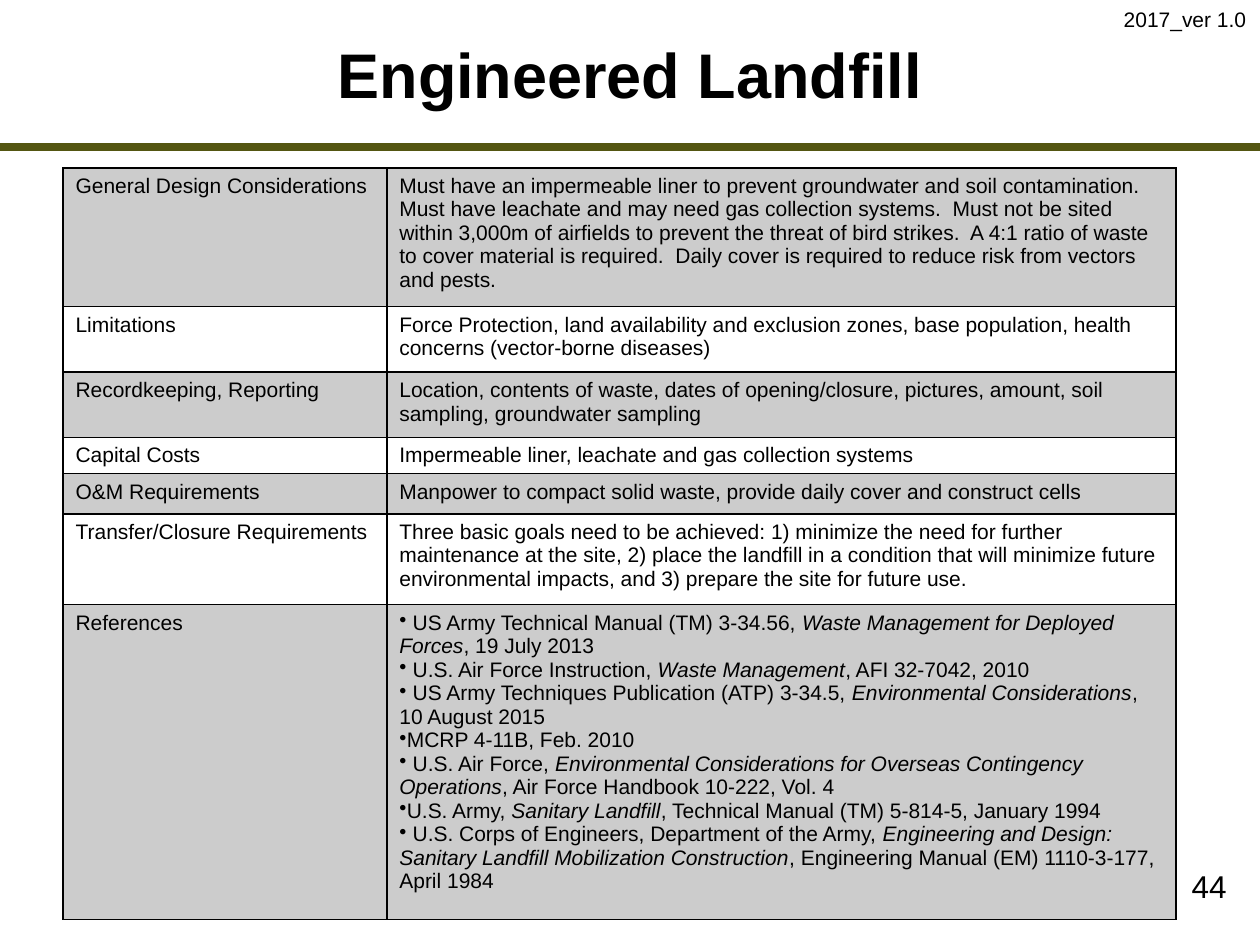
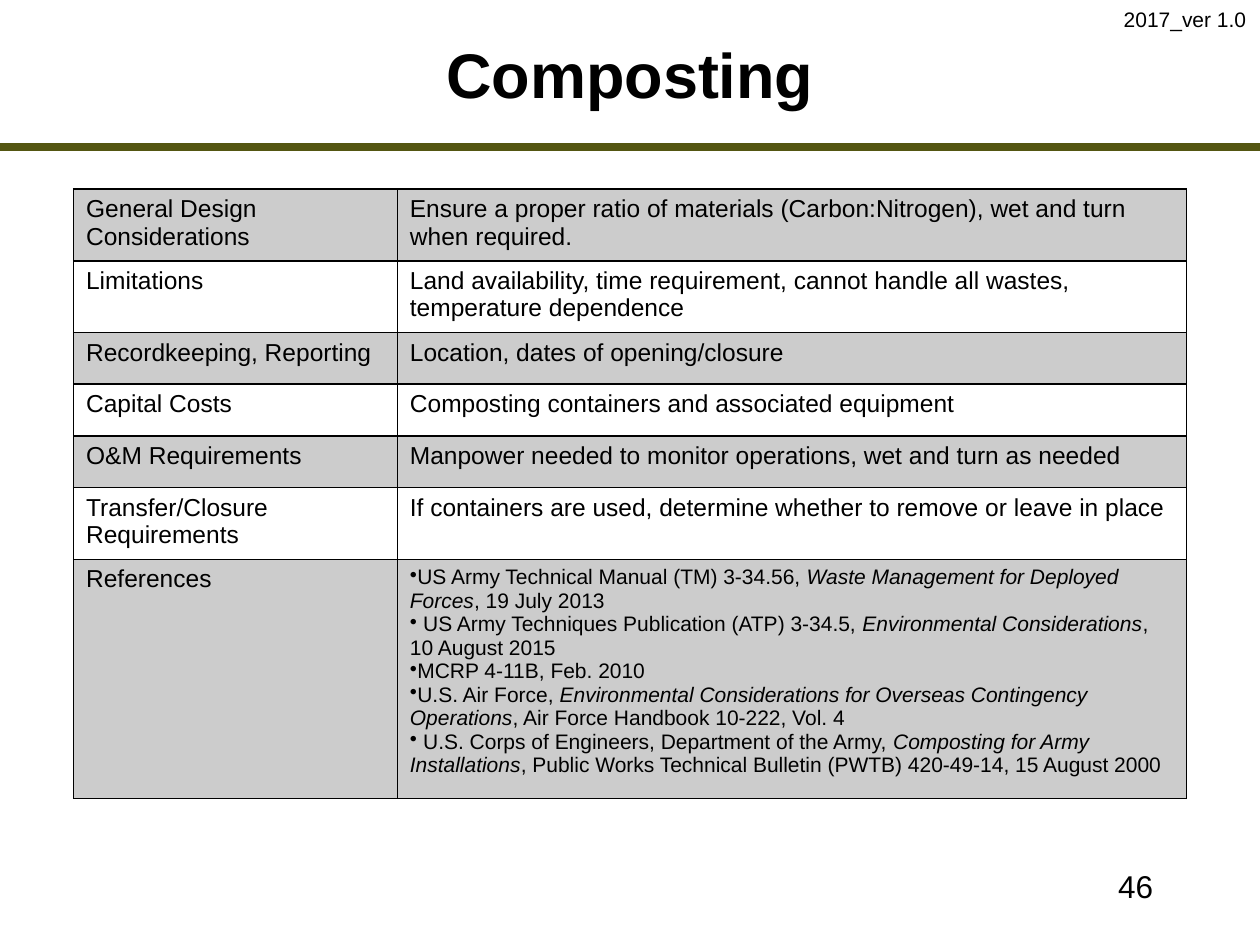
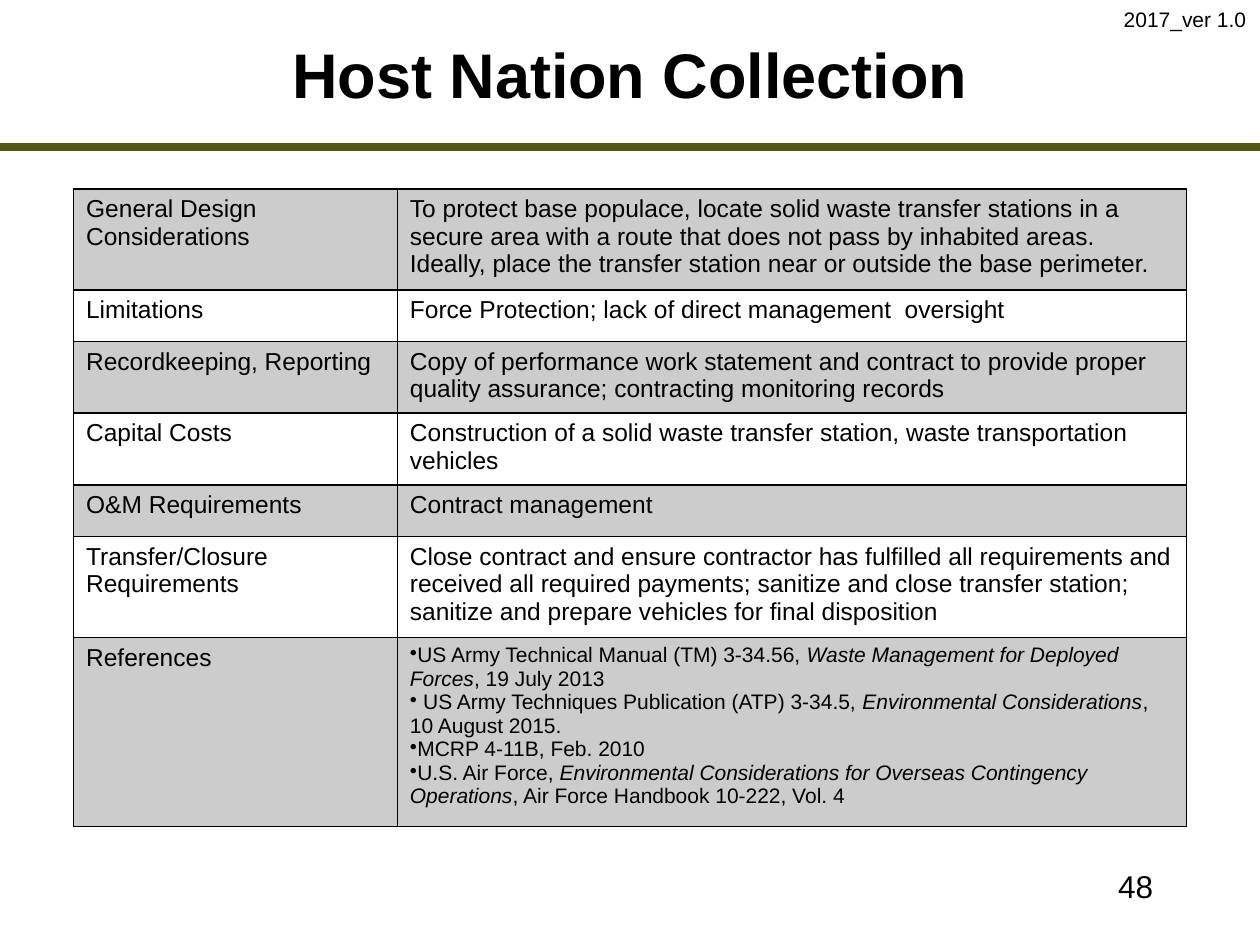
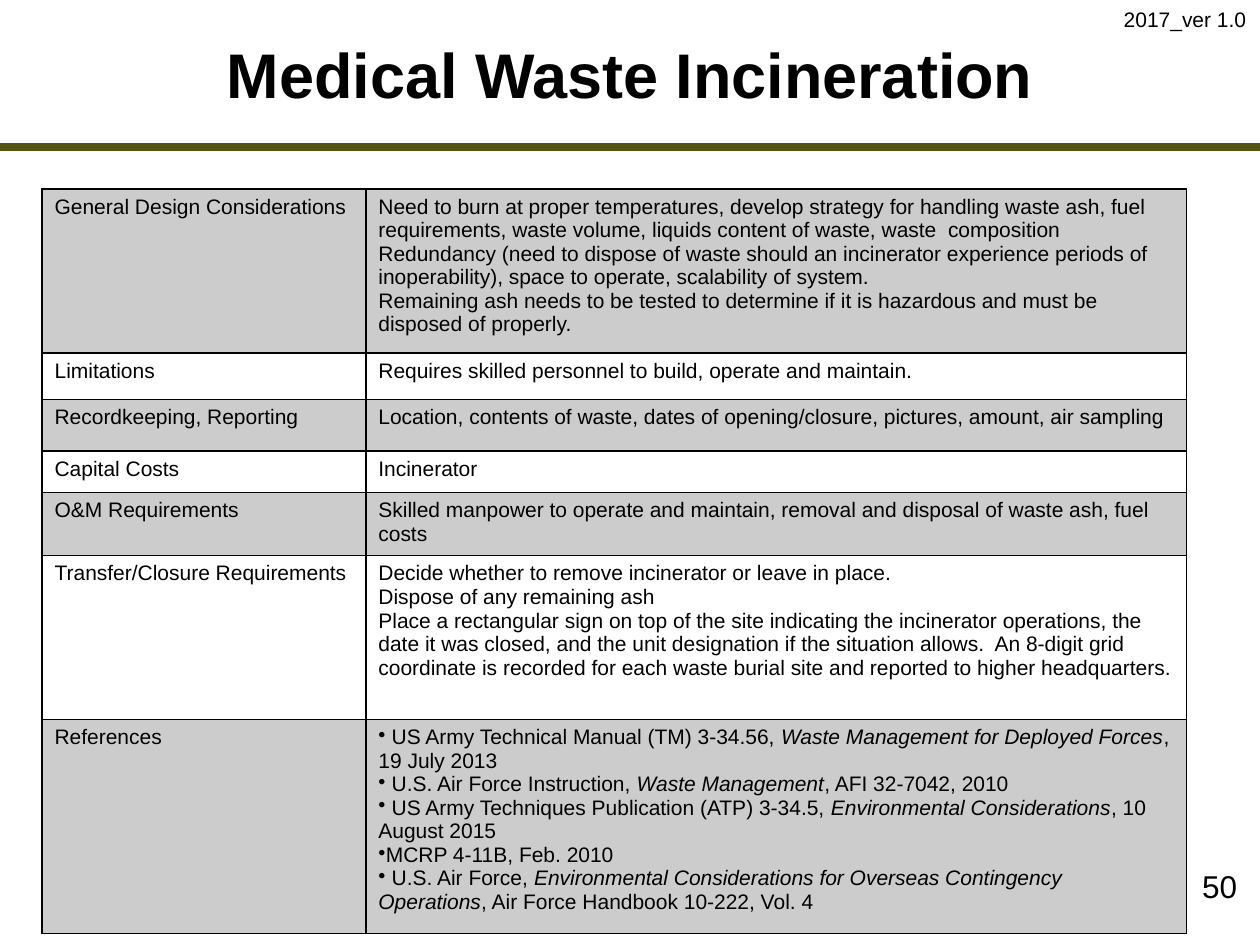
"""Build four solid waste disposal summary slides."""
from lxml.etree import SubElement
from pptx import Presentation
from pptx.dml.color import RGBColor
from pptx.enum.shapes import MSO_CONNECTOR as CONN
from pptx.enum.text import MSO_ANCHOR as ANCHOR, MSO_AUTO_SIZE as AUTO, PP_ALIGN as ALIGN
from pptx.oxml import parse_xml
from pptx.oxml.ns import nsdecls, qn
from pptx.util import Inches, Pt

BLACK = RGBColor(0x00, 0x00, 0x00)
OLIVE = RGBColor(0x54, 0x56, 0x12)
FONT = "Arial"
UNIT = Inches(1) // 12
WIDTH, HEIGHT = 120 * UNIT, 90 * UNIT
RULE_ROW = 14
LABEL_WIDTH = Inches(2.57)
SHADE_ALPHA = "20000"
REFERENCE_SIZE = 12

LABELS = [
    "General Design Considerations", "Limitations", "Recordkeeping, Reporting",
    "Capital Costs", "O&M Requirements", "Transfer/Closure Requirements", "References",
]

TM = "US Army Technical Manual (TM) 3-34.56, *Waste Management for Deployed Forces*, 19 July 2013"
AFI = " U.S. Air Force Instruction, *Waste Management*, AFI 32-7042, 2010"
ATP = (" US Army Techniques Publication (ATP) 3-34.5, *Environmental Considerations*, "
       "10 August 2015")
MCRP = "MCRP 4-11B, Feb. 2010"
HANDBOOK = ("U.S. Air Force, *Environmental Considerations for Overseas Contingency Operations*, "
            "Air Force Handbook 10-222, Vol. 4")
CORPS = " U.S. Corps of Engineers, Department of the Army, "

SLIDES = [
    dict(
        title="Engineered Landfill", number="44", number_col=93, size=12,
        left=6, top=16, width=106,
        heights=[1.1, 0.52, 0.52, 0.28, 0.32, 0.72, 2.5],
        details=[
            ["Must have an impermeable liner to prevent groundwater and soil contamination.  "
             "Must have leachate and may need gas collection systems.  Must not be sited within "
             "3,000m of airfields to prevent the threat of bird strikes.  A 4:1 ratio of waste to "
             "cover material is required.  Daily cover is required to reduce risk from vectors "
             "and pests."],
            ["Force Protection, land availability and exclusion zones, base population, health "
             "concerns (vector-borne diseases)"],
            ["Location, contents of waste, dates of opening/closure, pictures, amount, soil "
             "sampling, groundwater sampling"],
            ["Impermeable liner, leachate and gas collection systems"],
            ["Manpower to compact solid waste, provide daily cover and construct cells"],
            ["Three basic goals need to be achieved: 1) minimize the need for further maintenance "
             "at the site, 2) place the landfill in a condition that will minimize future "
             "environmental impacts, and 3) prepare the site for future use."],
            [" " + TM, AFI, ATP, MCRP, " " + HANDBOOK,
             "U.S. Army, *Sanitary Landfill*, Technical Manual (TM) 5-814-5, January 1994",
             CORPS + "*Engineering and Design: Sanitary Landfill Mobilization Construction*, "
             "Engineering Manual (EM) 1110-3-177, April 1984"],
        ],
    ),
    dict(
        title="Composting", number="46", number_col=86, size=14,
        left=7, top=18, width=106,
        heights=[0.57, 0.57, 0.41, 0.41, 0.41, 0.57, 1.9],
        details=[
            ["Ensure a proper ratio of materials (Carbon:Nitrogen), wet and turn when required."],
            ["Land availability, time requirement, cannot handle all wastes, temperature "
             "dependence"],
            ["Location, dates of opening/closure"],
            ["Composting containers and associated equipment"],
            ["Manpower needed to monitor operations, wet and turn as needed"],
            ["If containers are used, determine whether to remove or leave in place"],
            [TM, ATP, MCRP, HANDBOOK,
             CORPS + "*Composting for Army Installations*, Public Works Technical Bulletin "
             "(PWTB) 420-49-14, 15 August 2000"],
        ],
    ),
    dict(
        title="Host Nation Collection", number="48", number_col=86, size=14,
        left=7, top=18, width=106,
        heights=[0.8, 0.41, 0.57, 0.57, 0.41, 0.8, 1.5],
        details=[
            ["To protect base populace, locate solid waste transfer stations in a secure area "
             "with a route that does not pass by inhabited areas.  Ideally, place the transfer "
             "station near or outside the base perimeter."],
            ["Force Protection; lack of direct management  oversight"],
            ["Copy of performance work statement and contract to provide proper quality "
             "assurance; contracting monitoring records"],
            ["Construction of a solid waste transfer station, waste transportation vehicles"],
            ["Contract management"],
            ["Close contract and ensure contractor has fulfilled all requirements and received "
             "all required payments; sanitize and close transfer station; sanitize and prepare "
             "vehicles for final disposition"],
            [TM, ATP + ".", MCRP, HANDBOOK],
        ],
    ),
    dict(
        title="Medical Waste Incineration", number="50", number_col=94, size=12,
        left=4, top=18, width=109,
        heights=[1.3, 0.37, 0.41, 0.33, 0.5, 1.3, 1.7],
        details=[
            ["Need to burn at proper temperatures, develop strategy for handling waste ash, fuel "
             "requirements, waste volume, liquids content of waste, waste  composition",
             "Redundancy (need to dispose of waste should an incinerator experience periods of "
             "inoperability), space to operate, scalability of system.",
             "Remaining ash needs to be tested to determine if it is hazardous and must be "
             "disposed of properly."],
            ["Requires skilled personnel to build, operate and maintain."],
            ["Location, contents of waste, dates of opening/closure, pictures, amount, air "
             "sampling"],
            ["Incinerator"],
            ["Skilled manpower to operate and maintain, removal and disposal of waste ash, fuel "
             "costs"],
            ["Decide whether to remove incinerator or leave in place.",
             "Dispose of any remaining ash",
             "Place a rectangular sign on top of the site indicating the incinerator operations, "
             "the date it was closed, and the unit designation if the situation allows.  An "
             "8-digit grid coordinate is recorded for each waste burial site and reported to "
             "higher headquarters."],
            [" " + TM, AFI, ATP, MCRP, " " + HANDBOOK],
        ],
    ),
]


def grid(*cells):
    """Turn grid counts into lengths."""
    return [n * UNIT for n in cells]


def format_font(font, size, bold=False):
    """Apply the shared typeface and colour."""
    font.name, font.size, font.bold = FONT, Pt(size), bold
    font.color.rgb = BLACK


def prepare_layout(prs):
    """Place the title on the title-only layout."""
    layout = prs.slide_layouts[5]
    title = layout.placeholders[0]
    title.left, title.top, title.width, title.height = grid(14, 2, 92, 10)
    title.text_frame.vertical_anchor = ANCHOR.MIDDLE
    return layout


def add_layout_rule(s):
    """Draw the olive rule and hand it to the slide's layout."""
    rule = s.shapes.add_connector(CONN.STRAIGHT, 0, RULE_ROW * UNIT, WIDTH, RULE_ROW * UNIT)
    rule.line.color.rgb = OLIVE
    rule.line.width = Pt(4.5)
    SubElement(rule.element.spPr, qn("a:effectLst"))
    s.slide_layout.shapes.element.append(rule.element)


def add_title(s, text):
    """Fill the title placeholder."""
    p = s.shapes.title.text_frame.paragraphs[0]
    p.text, p.alignment = text, ALIGN.CENTER
    format_font(p.runs[0].font, 36, bold=True)


def add_label(s, text, box, size, align=ALIGN.LEFT, wrap=True):
    """Add a one-line text box."""
    tf = s.shapes.add_textbox(*box).text_frame
    tf.word_wrap = wrap
    tf.auto_size = AUTO.NONE if wrap else AUTO.SHAPE_TO_FIT_TEXT
    p = tf.paragraphs[0]
    p.text, p.alignment = text, align
    format_font(p.runs[0].font, size)


def style_cell(cell, shaded):
    """Shade a cell on alternate rows and outline it in black."""
    tc_pr = cell._tc.get_or_add_tcPr()
    if shaded:
        cell.fill.solid()
        cell.fill.fore_color.rgb = BLACK
        SubElement(tc_pr.find(".//" + qn("a:srgbClr")), qn("a:alpha"), val=SHADE_ALPHA)
    else:
        cell.fill.background()
    for i, side in enumerate("LRTB"):
        tc_pr.insert(i, parse_xml(
            f'<a:ln{side} {nsdecls("a")} w="{Pt(1)}"><a:solidFill>'
            f'<a:srgbClr val="{BLACK}"/></a:solidFill></a:ln{side}>'))


def write_cell(cell, lines, size, bullets=False):
    """Write paragraphs, with text between asterisks in italics."""
    tf = cell.text_frame
    for i, line in enumerate(lines):
        p = tf.add_paragraph() if i else tf.paragraphs[0]
        if bullets:
            SubElement(p._p.get_or_add_pPr(), qn("a:buChar"), char="•")
        for j, part in enumerate(line.split("*")):
            r = p.add_run()
            r.text = part
            format_font(r.font, size)
            r.font.italic = j % 2 == 1


def add_summary_table(s, data):
    """Add the two-column table of labels and details."""
    left, top, width = grid(data["left"], data["top"], data["width"])
    heights = [Inches(h) for h in data["heights"]]
    table = s.shapes.add_table(len(LABELS), 2, left, top, width, sum(heights)).table
    table.first_row = table.horz_banding = False
    table.columns[0].width, table.columns[1].width = LABEL_WIDTH, width - LABEL_WIDTH
    for i, (label, lines) in enumerate(zip(LABELS, data["details"])):
        table.rows[i].height = heights[i]
        is_reference = label == "References"
        write_cell(table.cell(i, 0), [label], data["size"])
        write_cell(table.cell(i, 1), lines, REFERENCE_SIZE if is_reference else data["size"],
                   is_reference)
        for j in range(2):
            style_cell(table.cell(i, j), i % 2 == 0)


def main():
    """Build and save the slides."""
    prs = Presentation()
    prs.slide_width, prs.slide_height = WIDTH, HEIGHT
    layout = prepare_layout(prs)
    for i, data in enumerate(SLIDES):
        s = prs.slides.add_slide(layout)
        if i == 0:
            add_layout_rule(s)
        add_summary_table(s, data)
        add_title(s, data["title"])
        add_label(s, data["number"], grid(data["number_col"], 82, 25, 6), 18, ALIGN.RIGHT)
        version_width = Inches(1.18)
        add_label(s, "2017_ver 1.0", (WIDTH - version_width, 0, version_width, Inches(0.3)), 12,
                  wrap=False)
    prs.save("out.pptx")


if __name__ == "__main__":
    main()
